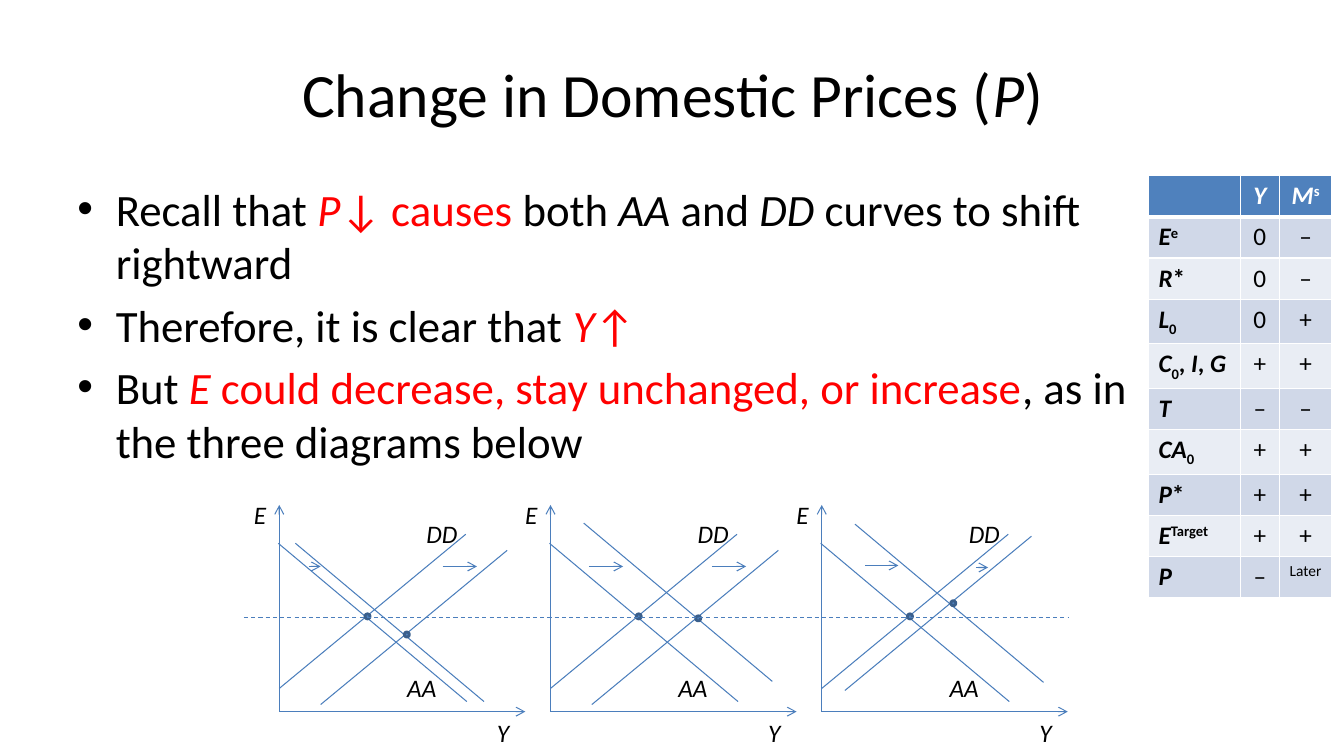
from dataclasses import dataclass

from lxml import etree
from pptx import Presentation
from pptx.dml.color import RGBColor
from pptx.enum.dml import MSO_LINE
from pptx.enum.shapes import MSO_CONNECTOR, MSO_SHAPE
from pptx.enum.text import MSO_ANCHOR, PP_ALIGN
from pptx.oxml.ns import qn
from pptx.slide import Slide
from pptx.util import Emu, Pt

STRAIGHT = MSO_CONNECTOR.STRAIGHT
ELLIPSE = MSO_SHAPE.OVAL
DASH = MSO_LINE.DASH
MIDDLE = MSO_ANCHOR.MIDDLE
LEFT, CENTER = PP_ALIGN.LEFT, PP_ALIGN.CENTER
TITLE_ONLY = 5
SUPERSCRIPT, SUBSCRIPT = 30, -25


@dataclass(frozen=True)
class Theme:
    font: str = "Calibri"
    text: str = "000000"
    accent: str = "FF0000"
    white: str = "FFFFFF"
    line: str = "4B7EBC"
    blue: str = "4F81BD"
    dot_edge: str = "3A5F8C"
    bands: tuple[str, str] = ("D0D8E8", "E9EDF4")
    title_size: int = 44
    body_size: int = 32
    label_size: int = 18
    note_size: int = 11


@dataclass(frozen=True)
class Span:
    text: str
    italic: bool = False
    color: str = Theme.text
    baseline: int = 0


@dataclass(frozen=True)
class Effect:
    """A table row: a shock and the signs of its effects on Y and on money supply."""
    shock: tuple[Span, ...]
    output: str
    money: str


@dataclass(frozen=True)
class Shift:
    """One diagram: curve displacements, new equilibrium, and (x, y, length) of arrows."""
    left: int
    dd: tuple[int, int]
    aa: tuple[int, int]
    equilibrium: tuple[int, int]
    dd_arrow: tuple[int, int, int]
    aa_arrow: tuple[int, int, int]


THEME = Theme()


def var(name: str, color: str = THEME.text) -> Span:
    return Span(name, italic=True, color=color)


def sup(text: str) -> Span:
    return Span(text, baseline=SUPERSCRIPT)


ZERO = Span("0", baseline=SUBSCRIPT)
TITLE = (Span("Change in Domestic Prices ("), var("P"), Span(")"))
BULLETS = (
    (Span("Recall that "), var("P", THEME.accent), Span("↓ causes ", color=THEME.accent),
     Span("both "), var("AA"), Span(" and "), var("DD"), Span(" curves to shift rightward")),
    (Span("Therefore, it is clear that "), var("Y", THEME.accent),
     Span("↑", color=THEME.accent)),
    (Span("But "), var("E", THEME.accent),
     Span(" could decrease, stay unchanged, or increase", color=THEME.accent),
     Span(", as in the three diagrams below")),
)
HEADER = ((), (var("Y"),), (var("M"), sup("s")))
EFFECTS = (
    Effect((var("E"), sup("e")), "0", "–"),
    Effect((var("R"), Span("*")), "0", "–"),
    Effect((var("L"), ZERO), "0", "+"),
    Effect((var("C"), ZERO, Span(", "), var("I"), Span(", "), var("G")), "+", "+"),
    Effect((var("T"),), "–", "–"),
    Effect((var("CA"), ZERO), "+", "+"),
    Effect((var("P"), Span("*")), "+", "+"),
    Effect((var("E"), sup("Target")), "+", "+"),
    Effect((var("P"),), "–", "Later"),
)
COLUMN_WIDTHS = (91, 39, 52)
ROW_HEIGHT = 41
SHIFTS = (
    Shift(277, (41, 16), (17, 0), (126, 629), (162, 562, 34), (29, 562, 12)),
    Shift(546, (41, 16), (34, -20), (146, 613), (160, 562, 34), (38, 562, 34)),
    Shift(815, (23, 2), (34, -19), (130, 598), (153, 563, 12), (43, 561, 33)),
)
OLD_EQUILIBRIUM = (87, 611)
DD_CURVE = (0, 683, 185, 530)
AA_CURVE = (-1, 539, 186, 696)
AXIS_Y, AXIS_TOP, AXIS_LENGTH = 706, 501, 244
DOT = 5
CURVE_LABELS = (("Y", 206, 707, 44), ("E", -35, 490, 44),
                ("DD", 136, 509, 58), ("AA", 117, 662, 58))


def px(value: int) -> Emu:
    return Emu(value * 9144)


def rgb(value: str) -> RGBColor:
    return RGBColor.from_string(value)


def write(para, text: str, *, size: int, color: str = THEME.text, bold: bool = False,
          italic: bool = False, baseline: int = 0) -> None:
    span = para.add_run()
    span.text = text
    font = span.font
    font.name, font.size, font.bold, font.italic = THEME.font, Pt(size), bold, italic
    font.color.rgb = rgb(color)
    if baseline:
        font._element.set("baseline", str(baseline * 1000))


def write_spans(para, spans: tuple[Span, ...], size: int, bold: bool = False,
                color: str | None = None) -> None:
    for span in spans:
        write(para, span.text, size=size, color=color or span.color, bold=bold,
              italic=span.italic, baseline=span.baseline)


def add_box(page: Slide, left: int, top: int, width: int, height: int):
    frame = page.shapes.add_textbox(px(left), px(top), px(width), px(height)).text_frame
    frame.word_wrap = True
    return frame


def add_line(page: Slide, x1: int, y1: int, x2: int, y2: int, *,
             arrow: bool = False, dashed: bool = False) -> None:
    connector = page.shapes.add_connector(STRAIGHT, px(x1), px(y1), px(x2), px(y2))
    line = connector.line
    line.color.rgb, line.width = rgb(THEME.line), Pt(0.75)
    if dashed:
        line.dash_style = DASH
    properties = connector._element.spPr
    if arrow:
        etree.SubElement(properties.find(qn("a:ln")), qn("a:tailEnd"), type="arrow")
    etree.SubElement(properties, qn("a:effectLst"))


def add_dot(page: Slide, x: int, y: int) -> None:
    dot = page.shapes.add_shape(ELLIPSE, px(x - DOT // 2), px(y - DOT // 2), px(DOT), px(DOT))
    dot.shadow.inherit = False
    dot.fill.solid()
    dot.fill.fore_color.rgb = rgb(THEME.blue)
    dot.line.color.rgb, dot.line.width = rgb(THEME.dot_edge), Pt(2)


def add_title(page: Slide) -> None:
    title = page.shapes.title
    title.left, title.top, title.width, title.height = px(67), px(30), px(1200), px(125)
    title.text_frame.vertical_anchor = MIDDLE
    para = title.text_frame.paragraphs[0]
    para.alignment = CENTER
    write_spans(para, TITLE, THEME.title_size)


def add_bullets(page: Slide) -> None:
    frame = add_box(page, 67, 175, 1073, 495)
    for index, spans in enumerate(BULLETS):
        para = frame.add_paragraph() if index else frame.paragraphs[0]
        para.space_before = Pt(6)
        properties = para._p.get_or_add_pPr()
        properties.set("marL", str(px(38)))
        properties.set("indent", str(px(-38)))
        etree.SubElement(properties, qn("a:buFont"), typeface="Arial")
        etree.SubElement(properties, qn("a:buChar"), char="•")
        write_spans(para, spans, THEME.body_size)


def add_diagram(page: Slide, shift: Shift) -> None:
    left = shift.left
    add_line(page, left, AXIS_Y, left + AXIS_LENGTH, AXIS_Y, arrow=True)
    add_line(page, left, AXIS_Y, left, AXIS_TOP, arrow=True)
    for (x1, y1, x2, y2), moved in ((DD_CURVE, shift.dd), (AA_CURVE, shift.aa)):
        for dx, dy in ((0, 0), moved):
            add_line(page, left + x1 + dx, y1 + dy, left + x2 + dx, y2 + dy)
    for text, x, y, width in CURVE_LABELS:
        para = add_box(page, left + x, y, width, 40).paragraphs[0]
        write(para, text, size=THEME.label_size, italic=True)
    for x, y in (shift.equilibrium, OLD_EQUILIBRIUM):
        add_dot(page, left + x, y)
    for x, y, length in (shift.dd_arrow, shift.aa_arrow):
        add_line(page, left + x, y, left + x + length, y, arrow=True)


def style_cell(cell, fill: str, bottom: int) -> None:
    properties = cell._tc.get_or_add_tcPr()
    for side, width in (("L", 1), ("R", 1), ("T", 1), ("B", bottom)):
        edge = etree.SubElement(properties, qn(f"a:ln{side}"), w=str(Pt(width)))
        paint = etree.SubElement(edge, qn("a:solidFill"))
        etree.SubElement(paint, qn("a:srgbClr"), val=THEME.white)
    cell.fill.solid()
    cell.fill.fore_color.rgb = rgb(fill)


def add_effects_table(page: Slide) -> None:
    rows = [HEADER] + [(e.shock, (Span(e.output),), (Span(e.money),)) for e in EFFECTS]
    table = page.shapes.add_table(len(rows), len(COLUMN_WIDTHS), px(1139), px(174),
                                  px(sum(COLUMN_WIDTHS)), px(ROW_HEIGHT * len(rows))).table
    for column, width in zip(table.columns, COLUMN_WIDTHS):
        column.width = px(width)
    for r, row in enumerate(rows):
        header = r == 0
        for c, spans in enumerate(row):
            cell = table.cell(r, c)
            style_cell(cell, THEME.blue if header else THEME.bands[(r - 1) % 2],
                       3 if header else 1)
            para = cell.text_frame.paragraphs[0]
            para.alignment = CENTER if c else LEFT
            note = bool(spans) and spans[0].text == "Later"
            write_spans(para, spans, THEME.note_size if note else THEME.label_size,
                        bold=header or c == 0, color=THEME.white if header else None)


def main() -> None:
    deck = Presentation()
    deck.slide_width, deck.slide_height = px(1333), px(750)
    page = deck.slides.add_slide(deck.slide_layouts[TITLE_ONLY])
    add_title(page)
    add_bullets(page)
    for shift in SHIFTS:
        add_diagram(page, shift)
    add_effects_table(page)
    add_line(page, 242, 613, 1060, 613, dashed=True)
    deck.save("out.pptx")


if __name__ == "__main__":
    main()
